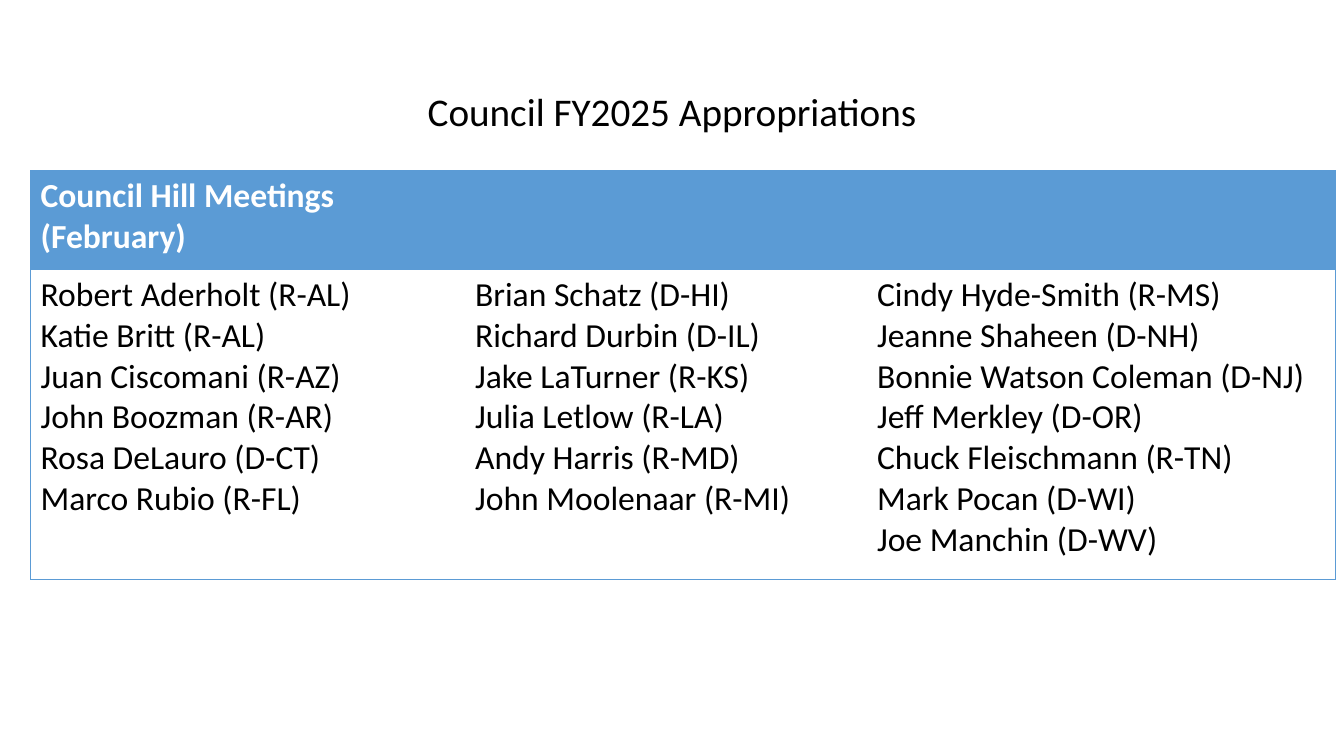
from lxml import etree
from pptx import Presentation
from pptx.dml.color import RGBColor
from pptx.enum.text import MSO_ANCHOR, PP_ALIGN
from pptx.oxml.ns import qn
from pptx.util import Cm, Pt

MIDDLE = MSO_ANCHOR.MIDDLE
CENTER = PP_ALIGN.CENTER
BLUE, WHITE, BLACK = "5B9BD5", "FFFFFF", "000000"
NO_GRID = "{2D5ABB26-0587-4C30-8999-92F81FD0307C}"


def style(frame, size, color, bold=False):
    for para in frame.paragraphs:
        for run in para.runs:
            font = run.font
            font.name, font.size, font.bold = "Calibri", Pt(size), bold
            font.color.rgb = RGBColor.from_string(color)


def border(cell, side):
    line = etree.SubElement(cell._tc.get_or_add_tcPr(), qn("a:ln" + side), w="6350")
    fill = etree.SubElement(line, qn("a:solidFill"))
    etree.SubElement(fill, qn("a:srgbClr"), val=BLUE)


deck = Presentation()
deck.slide_width, deck.slide_height = Cm(33.87), Cm(19.05)
slide = deck.slides.add_slide(deck.slide_layouts[5])

# Title
title = slide.shapes.title
title.left, title.top, title.width, title.height = Cm(2.33), Cm(1.03), Cm(29.21), Cm(3.68)
frame = title.text_frame
frame.text = "Council FY2025 Appropriations"
frame.vertical_anchor = MIDDLE
frame.paragraphs[0].alignment = CENTER
frame.paragraphs[0].line_spacing = 0.9
style(frame, 28, BLACK)

# Meetings, one list per column
names = [
    ["Robert Aderholt (R-AL)", "Katie Britt (R-AL)", "Juan Ciscomani (R-AZ)",
     "John Boozman (R-AR)", "Rosa DeLauro (D-CT)", "Marco Rubio (R-FL)"],
    ["Brian Schatz (D-HI)", "Richard Durbin (D-IL)", "Jake LaTurner (R-KS)",
     "Julia Letlow (R-LA)", "Andy Harris (R-MD)", "John Moolenaar (R-MI)"],
    ["Cindy Hyde-Smith (R-MS)", "Jeanne Shaheen (D-NH)",
     "Bonnie Watson Coleman (D-NJ)", "Jeff Merkley (D-OR)",
     "Chuck Fleischmann (R-TN)", "Mark Pocan (D-WI)", "Joe Manchin (D-WV)"],
]
heads = ["Council Hill Meetings (February)", "", ""]
widths = [10.95, 10.13, 11.79]
heights = [2.48, 7.83]

# Table
table = slide.shapes.add_table(2, 3, Cm(0.77), Cm(4.3), Cm(sum(widths)), Cm(sum(heights))).table
table._tbl.tblPr.find(qn("a:tableStyleId")).text = NO_GRID
table.horz_banding = False
for row, height in zip(table.rows, heights):
    row.height = Cm(height)

for col, (head, people, width) in enumerate(zip(heads, names, widths)):
    table.columns[col].width = Cm(width)
    top, body = table.cell(0, col), table.cell(1, col)
    top.text_frame.text = head
    body.text_frame.text = "\n".join(people)
    style(top.text_frame, 24, WHITE, True)
    style(body.text_frame, 24, BLACK)

    # Outer frame and the rule under the heading
    for cell, sides, color in ((top, "T", BLUE), (body, "TB", WHITE)):
        edge = {0: "L", 2: "R"}.get(col, "")
        for side in edge + sides:
            border(cell, side)
        cell.fill.solid()
        cell.fill.fore_color.rgb = RGBColor.from_string(color)

deck.save("out.pptx")
